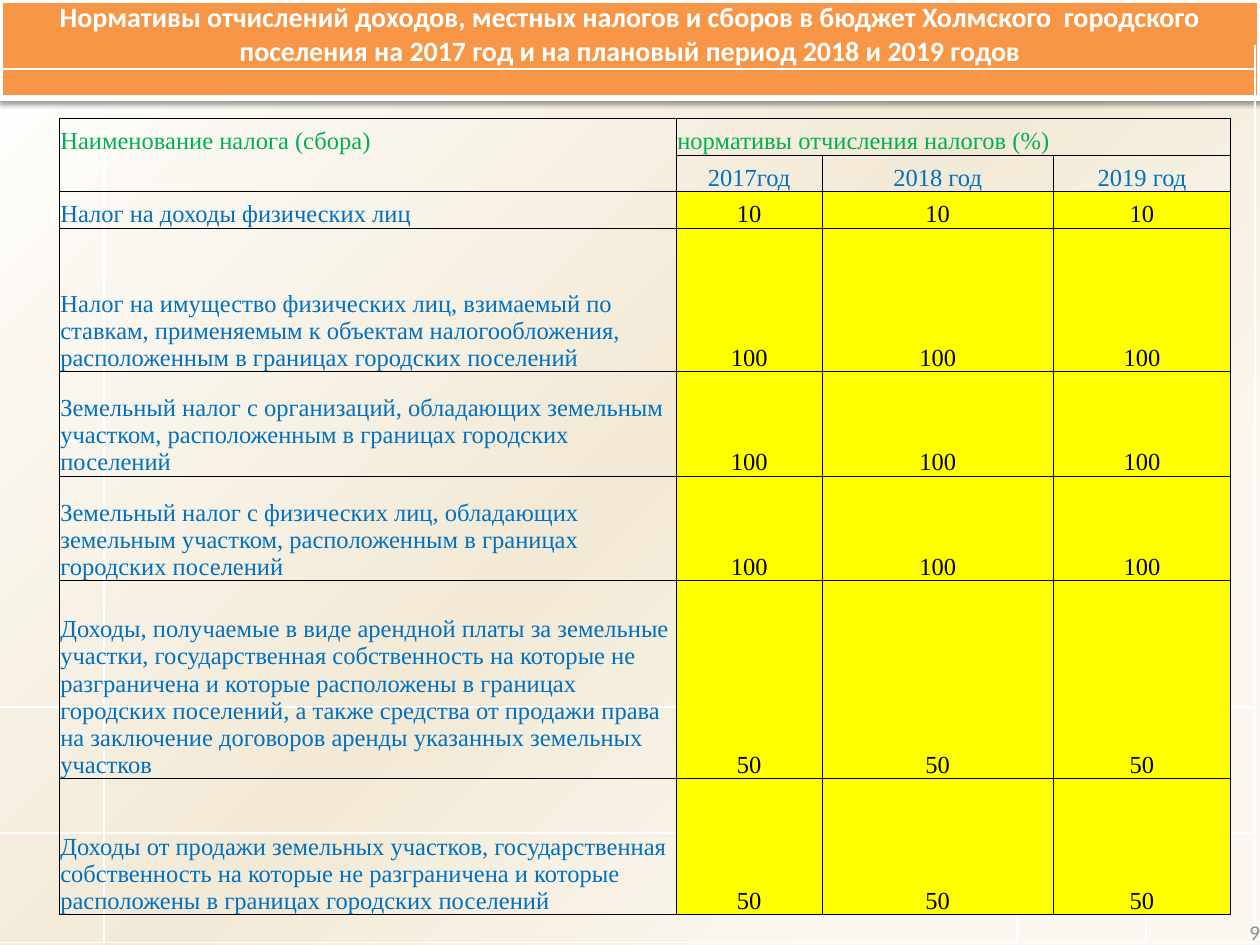
"""Build the slide with the tax allocation rates of the town budget."""
from dataclasses import dataclass

from lxml import etree
from pptx import Presentation
from pptx.dml.color import RGBColor
from pptx.enum.shapes import MSO_CONNECTOR
from pptx.enum.text import MSO_ANCHOR, MSO_AUTO_SIZE, PP_ALIGN
from pptx.oxml import parse_xml
from pptx.oxml.ns import nsdecls, qn
from pptx.util import Pt

STRAIGHT = MSO_CONNECTOR.STRAIGHT
TOP, MIDDLE, BOTTOM = MSO_ANCHOR.TOP, MSO_ANCHOR.MIDDLE, MSO_ANCHOR.BOTTOM
LEFT, CENTER, RIGHT = PP_ALIGN.LEFT, PP_ALIGN.CENTER, PP_ALIGN.RIGHT
NO_FIT = MSO_AUTO_SIZE.NONE


@dataclass(frozen=True)
class Theme:
    heading_font: str = "Calibri"
    table_font: str = "Times New Roman"
    heading_size: float = 16
    table_size: float = 14
    number_size: float = 12
    orange: str = "F79646"
    white: str = "FFFFFF"
    black: str = "000000"
    green: str = "00B050"
    blue: str = "0070C0"
    yellow: str = "FFFF00"
    grey: str = "8C8C8C"
    backdrop: tuple = ((19, "FAF8F0"), (50, "F2EAD6"), (100, "FFFFFF"))


THEME = Theme()
TITLE = ("Нормативы отчислений доходов, местных налогов и сборов в бюджет Холмского\u00a0 городского "
         "поселения на 2017 год и на плановый период 2018 и 2019 годов").replace("\u00a0", " ")
PAGE_NUMBER = "9"
NAME_HEADING = "Наименование налога (сбора)"
RATE_HEADING = "нормативы отчисления налогов (%)"
YEARS = ["2017год", "2018 год", "2019 год"]
TAXES = [
    ("Налог на доходы физических лиц", [10, 10, 10]),
    ("Налог на имущество физических лиц, взимаемый по ставкам, применяемым к объектам "
     "налогообложения, расположенным в границах городских поселений", [100, 100, 100]),
    ("Земельный налог с организаций, обладающих земельным участком, расположенным в границах "
     "городских поселений", [100, 100, 100]),
    ("Земельный налог с физических лиц, обладающих земельным участком, расположенным в границах "
     "городских поселений", [100, 100, 100]),
    ("Доходы, получаемые в виде арендной платы за земельные участки, государственная собственность "
     "на которые не разграничена и которые раcположены в границах городских поселений, а также "
     "средства от продажи права на заключение договоров аренды указанных земельных участков",
     [50, 50, 50]),
    ("Доходы от продажи земельных участков, государственная собственность на которые не "
     "разграничена и которые расположены в границах городских поселений", [50, 50, 50]),
]

WIDTH, HEIGHT = 720, 540
GRID_RIGHT, GRID_BOTTOM = 717.5, 538.5
VERTICALS = [(59.5, 77.5), (581, 232.5), (655, 232.5), (717, 25.7)]
HORIZONTALS = [404, 476, 39.3, 538.5]
TABLE_LEFT, TABLE_TOP = 33.8, 67.7
COLUMNS = [3.6, 82.8, 82.8, 82.8, 100, 83.5, 132, 101.5]
ROWS = [20.9, 20.9, 20.9, 82, 59.8, 59.8, 113, 77.8]
NAME_COLUMNS = 5
HEADER_ROWS = 2
SPLIT_ROWS = (0, HEADER_ROWS)


def write(frame, text, font, size, color, align=LEFT, bold=False):
    para = frame.paragraphs[0]
    para.alignment = align
    span = para.add_run()
    span.text = text
    span.font.name, span.font.size, span.font.bold = font, Pt(size), bold
    span.font.color.rgb = RGBColor.from_string(color)


def prepare_frame(frame, anchor):
    frame.word_wrap = True
    frame.auto_size = NO_FIT
    frame.vertical_anchor = anchor
    frame.margin_left = frame.margin_right = frame.margin_top = frame.margin_bottom = 0


def paint_background(page):
    fill = page.background.fill
    fill.gradient()
    gradient = page._element.find(".//" + qn("a:gradFill"))
    stops = "".join(f'<a:gs pos="{place * 1000}"><a:srgbClr val="{color}"/></a:gs>'
                    for place, color in THEME.backdrop)
    gradient.getparent().replace(gradient, parse_xml(
        f'<a:gradFill rotWithShape="1" {nsdecls("a")}><a:gsLst>{stops}</a:gsLst>'
        '<a:path path="circle"><a:fillToRect l="100000" t="100000"/></a:path></a:gradFill>'))


def add_title(page):
    title = page.shapes.title
    title.left, title.top, title.width, title.height = Pt(0), Pt(0), Pt(WIDTH), Pt(56)
    title.fill.solid()
    title.fill.fore_color.rgb = RGBColor.from_string(THEME.orange)
    title.line.color.rgb = RGBColor.from_string(THEME.white)
    title.line.width = Pt(3)
    title._element.spPr.append(parse_xml(
        f'<a:effectLst {nsdecls("a")}><a:outerShdw blurRad="{Pt(3.1)}" dist="{Pt(1.6)}" dir="5400000" '
        f'rotWithShape="0"><a:srgbClr val="{THEME.black}"><a:alpha val="38000"/></a:srgbClr>'
        '</a:outerShdw></a:effectLst>'))
    prepare_frame(title.text_frame, TOP)
    write(title.text_frame, TITLE, THEME.heading_font, THEME.heading_size, THEME.white, CENTER, True)


def add_line(page, *ends):
    line = page.shapes.add_connector(STRAIGHT, *map(Pt, ends))
    line.line.color.rgb = RGBColor.from_string(THEME.white)
    line.line.width = Pt(1)
    etree.SubElement(line._element.spPr, qn("a:effectLst"))


def add_page_number(page):
    box = page.shapes.add_textbox(Pt(552), Pt(525), Pt(168), Pt(15))
    prepare_frame(box.text_frame, MIDDLE)
    write(box.text_frame, PAGE_NUMBER, THEME.heading_font, THEME.number_size, THEME.grey, RIGHT)


def hidden_sides(row, column):
    sides = set()
    if column < NAME_COLUMNS:
        if column > 0:
            sides.add("L")
        if column < NAME_COLUMNS - 1:
            sides.add("R")
        if row == 0:
            sides.add("B")
        if row == 1:
            sides.add("T")
    return sides


def format_cell(cell, row, column):
    cell.vertical_anchor = BOTTOM
    cell.margin_left = cell.margin_right = cell.margin_top = Pt(0.7)
    cell.margin_bottom = 0
    properties = cell._tc.get_or_add_tcPr()
    hidden = hidden_sides(row, column)
    for side in "LRTB":
        paint = ("<a:noFill/>" if side in hidden else
                 f'<a:solidFill><a:srgbClr val="{THEME.black}"/></a:solidFill>')
        properties.append(parse_xml(f'<a:ln{side} w="{Pt(0.5)}" {nsdecls("a")}>{paint}</a:ln{side}>'))
    if row >= HEADER_ROWS and column >= NAME_COLUMNS:
        cell.fill.solid()
        cell.fill.fore_color.rgb = RGBColor.from_string(THEME.yellow)
    else:
        cell.fill.background()
    ending = etree.SubElement(cell.text_frame.paragraphs[0]._p, qn("a:endParaRPr"))
    ending.set("sz", str(THEME.table_size * 100))


def add_table(page):
    table = page.shapes.add_table(len(ROWS), len(COLUMNS), Pt(TABLE_LEFT), Pt(TABLE_TOP),
                                  Pt(sum(COLUMNS)), Pt(sum(ROWS))).table
    table.first_row = table.horz_banding = False
    for column, width in zip(table.columns, COLUMNS):
        column.width = Pt(width)
    for row, height in zip(table.rows, ROWS):
        row.height = Pt(height)
    for row in range(len(ROWS)):
        for column in range(len(COLUMNS)):
            format_cell(table.cell(row, column), row, column)
        if row != 1:
            last = NAME_COLUMNS - (2 if row in SPLIT_ROWS else 1)
            table.cell(row, 0).merge(table.cell(row, last))
    table.cell(0, NAME_COLUMNS).merge(table.cell(0, len(COLUMNS) - 1))

    def put(row, column, text, color, align=LEFT):
        write(table.cell(row, column).text_frame, text, THEME.table_font, THEME.table_size, color, align)

    put(0, 0, NAME_HEADING, THEME.green)
    put(0, NAME_COLUMNS, RATE_HEADING, THEME.green)
    for column, year in enumerate(YEARS, NAME_COLUMNS):
        put(1, column, year, THEME.blue, CENTER)
    for row, (name, rates) in enumerate(TAXES, HEADER_ROWS):
        put(row, 0, name, THEME.blue)
        for column, rate in enumerate(rates, NAME_COLUMNS):
            put(row, column, str(rate), THEME.black, CENTER)


def main():
    deck = Presentation()
    deck.slide_width, deck.slide_height = Pt(WIDTH), Pt(HEIGHT)
    page = deck.slides.add_slide(deck.slide_layouts[5])
    paint_background(page)
    add_title(page)
    for x, top in VERTICALS:
        add_line(page, x, top, x, GRID_BOTTOM)
    for y in HORIZONTALS:
        add_line(page, 0, y, GRID_RIGHT, y)
    add_page_number(page)
    add_table(page)
    deck.save("out.pptx")


if __name__ == "__main__":
    main()
